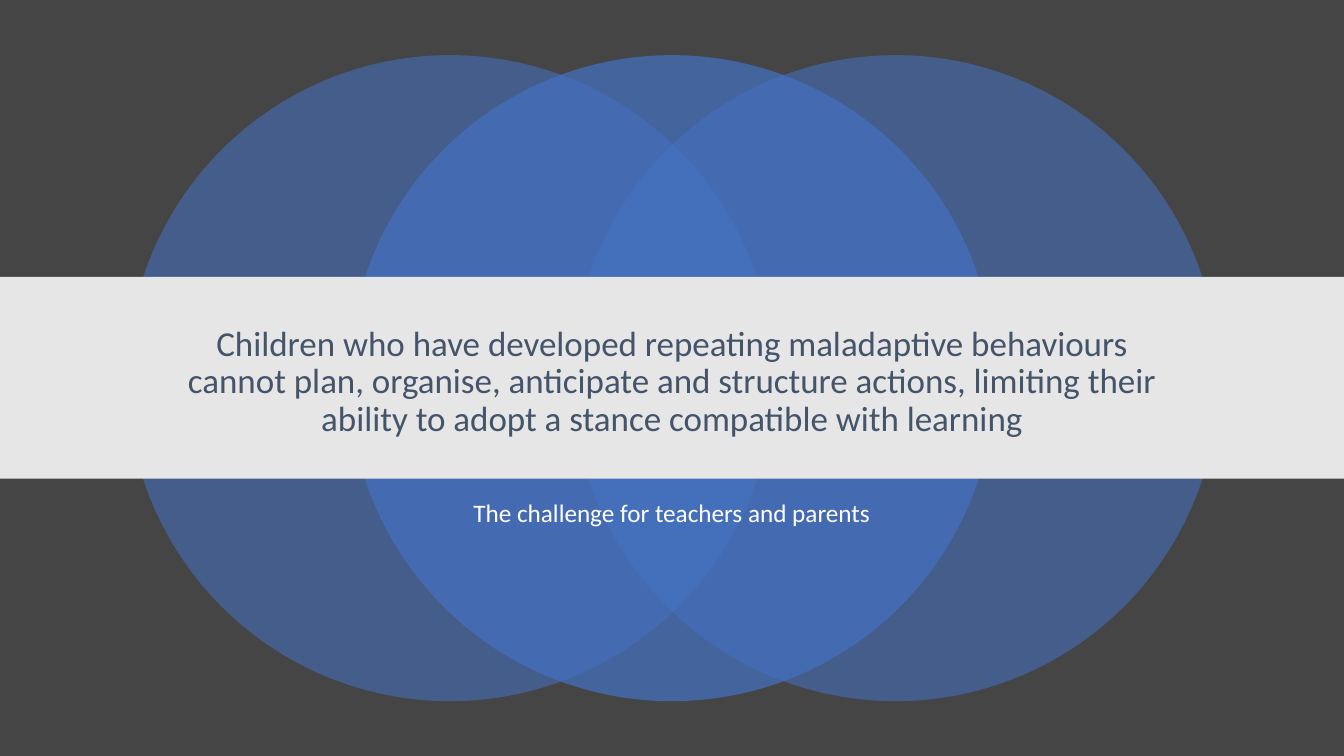
from lxml import etree
from pptx import Presentation
from pptx.dml.color import RGBColor
from pptx.enum.shapes import MSO_SHAPE as Preset
from pptx.enum.text import MSO_ANCHOR as Anchor, PP_ALIGN as Align
from pptx.oxml.ns import qn
from pptx.util import Cm, Pt

COLORS = {
    "background": "454545",
    "circle": "4472C4",
    "band": "E7E6E6",
    "title": "44546A",
    "subtitle": "FFFFFF",
}

deck = Presentation()
deck.slide_width = Cm(33.87)
deck.slide_height = Cm(19.05)
page = deck.slides.add_slide(deck.slide_layouts[6])
page.background.fill.solid()
page.background.fill.fore_color.rgb = RGBColor.from_string(COLORS["background"])


def add_plain_shape(preset, left, top, width, height, color):
    shape = page.shapes.add_shape(preset, Cm(left), Cm(top), Cm(width), Cm(height))
    shape.shadow.inherit = False
    shape.fill.solid()
    shape.fill.fore_color.rgb = RGBColor.from_string(COLORS[color])
    shape.line.fill.background()
    return shape


def add_centred_text(text, top, height, size, color, anchor, space_before):
    box = page.shapes.add_textbox(Cm(4.23), Cm(top), Cm(25.4), Cm(height))
    box.text_frame.word_wrap = True
    box.text_frame.vertical_anchor = anchor
    para = box.text_frame.paragraphs[0]
    para.alignment = Align.CENTER
    para.line_spacing = 0.9
    para.space_before = Pt(space_before)
    span = para.add_run()
    span.text = text
    span.font.name = "Calibri"
    span.font.size = Pt(size)
    span.font.color.rgb = RGBColor.from_string(COLORS[color])


for left, opacity in [(3.2, 55), (14.43, 55), (8.79, 70)]:
    circle = add_plain_shape(Preset.OVAL, left, 1.39, 16.28, 16.28, "circle")
    tint = circle.fill._xPr.find(".//" + qn("a:srgbClr"))
    etree.SubElement(tint, qn("a:alpha"), val=str(opacity * 1000))

add_centred_text(
    "The challenge for teachers and parents",
    12.5, 2.11, 18, "subtitle", Anchor.TOP, 10,
)
add_plain_shape(Preset.RECTANGLE, 0, 6.98, 33.87, 5.08, "band")
add_centred_text(
    "Children who have developed repeating maladaptive behaviours cannot plan, "
    "organise, anticipate and structure actions, limiting their ability to adopt "
    "a stance compatible with learning",
    7.72, 3.84, 25, "title", Anchor.MIDDLE, 0,
)

deck.save("out.pptx")
